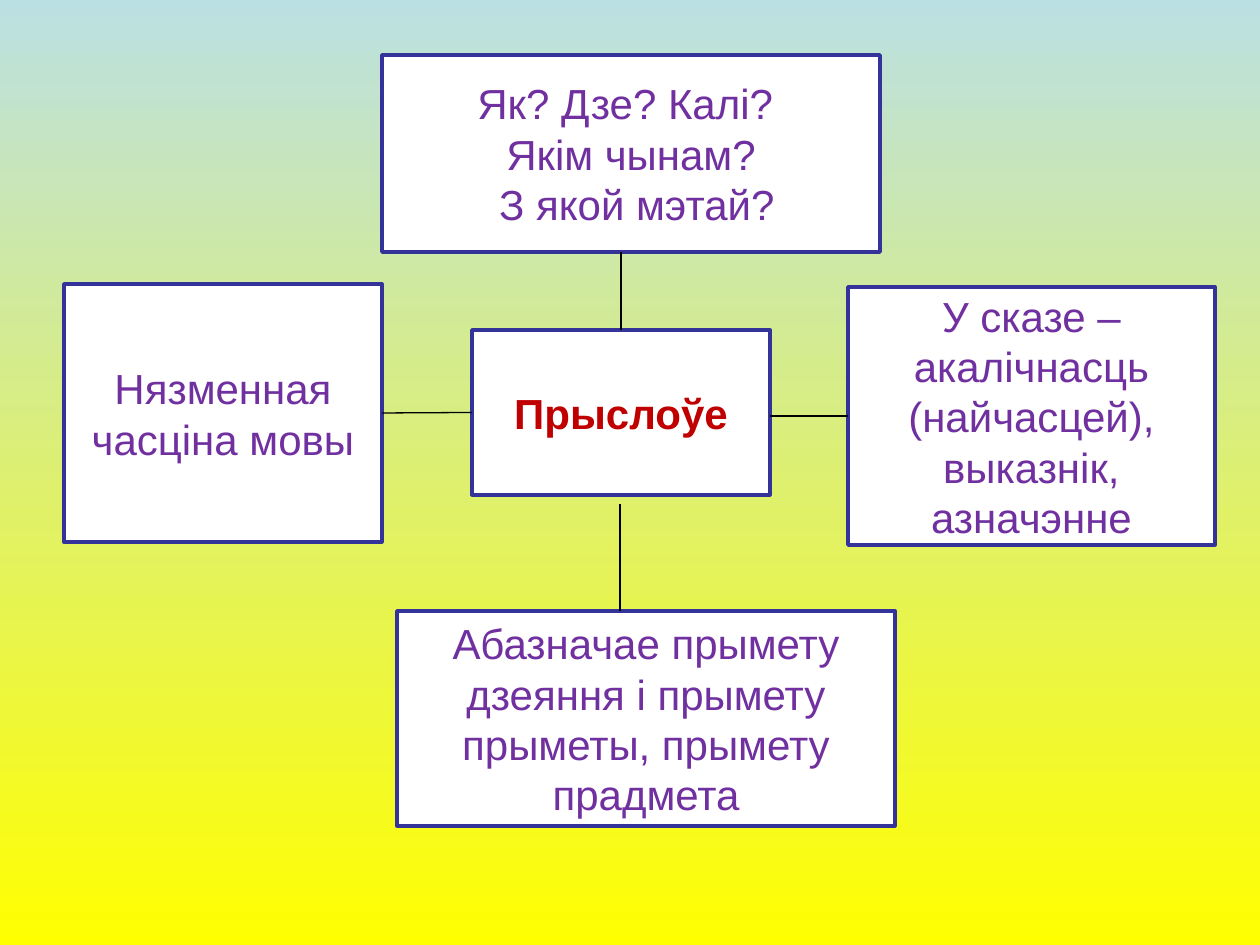
import pptx
import pptx.dml.color
import pptx.enum.shapes
import pptx.enum.text
import pptx.util
from pptx.oxml.ns import qn
from lxml import etree

PX = 914400 / 126
TOP, LEFT, BOTTOM, RIGHT = range(4)
PURPLE, RED, NAVY, WHITE, BLACK = "7030A0", "C00000", "333399", "FFFFFF", "000000"


def px(n):
    return pptx.util.Emu(round(n * PX))


def rgb(color):
    return pptx.dml.color.RGBColor.from_string(color)


def add_text(tf, lines, size=24, color=PURPLE, bold=False, font="Arial"):
    tf.word_wrap = True
    tf.vertical_anchor = pptx.enum.text.MSO_ANCHOR.MIDDLE
    for i, line in enumerate(lines):
        p = tf.add_paragraph() if i else tf.paragraphs[0]
        p.alignment = pptx.enum.text.PP_ALIGN.CENTER
        r = p.add_run()
        r.text = line
        r.font.name = font
        r.font.size = pptx.util.Pt(size)
        r.font.bold = bold
        r.font.color.rgb = rgb(color)


def add_box(s, box, lines, **text_format):
    sp = s.shapes.add_shape(pptx.enum.shapes.MSO_SHAPE.RECTANGLE, *map(px, box))
    sp.shadow.inherit = False
    sp.fill.solid()
    sp.fill.fore_color.rgb = rgb(WHITE)
    sp.line.color.rgb = rgb(NAVY)
    sp.line.width = pptx.util.Pt(2)
    add_text(sp.text_frame, lines, **text_format)
    return sp


def add_line(s, start, end, begin_at=None, end_at=None):
    """Draw a line; begin_at and end_at are (shape, side) pairs to join."""
    line = s.shapes.add_connector(
        pptx.enum.shapes.MSO_CONNECTOR.STRAIGHT, *map(px, start + end))
    line.line.color.rgb = rgb(BLACK)
    line.line.width = pptx.util.Pt(0.75)
    etree.SubElement(line._element.spPr, qn("a:effectLst"))
    if begin_at:
        line.begin_connect(*begin_at)
    if end_at:
        line.end_connect(*end_at)


def fill_background(s, top_color, bottom_color):
    fill = s.background.fill
    fill.gradient()
    fill.gradient_angle = 270
    for stop, color in zip(fill.gradient_stops, (top_color, bottom_color)):
        stop.color.rgb = rgb(color)


def add_adverb_map(s, box):
    """Place the central term and the four boxes around it."""
    x, y, _, _ = box

    def at(left, top, *size):
        return (x + left, y + top, *size)

    term = add_box(s, at(408, 275, 298, 165), ["Прыслоўе"], color=RED, bold=True)
    kind = add_box(s, at(0, 229, 318, 258), ["Нязменная часціна мовы"])
    add_box(s, at(333, 556, 498, 215),
            ["Абазначае прымету дзеяння і прымету прыметы, прымету прадмета"])
    role = add_box(s, at(784, 232, 367, 258),
                   ["У сказе – акалічнасць (найчасцей), выказнік, азначэнне"])
    add_box(s, at(318, 0, 498, 197),
            ["Як? Дзе? Калі? ", "Якім чынам?", " З якой мэтай?"])

    add_line(s, at(557, 197), at(557, 275), end_at=(term, TOP))
    add_line(s, at(706, 361), at(784, 361), end_at=(role, LEFT))
    add_line(s, at(556, 556), at(556, 449))
    add_line(s, at(318, 358), at(408, 358), (kind, RIGHT), (term, LEFT))


def main():
    prs = pptx.Presentation()
    prs.slide_width, prs.slide_height = px(1260), px(945)
    s = prs.slides.add_slide(prs.slide_layouts[6])
    fill_background(s, "BBE0E3", "FFFF00")
    add_adverb_map(s, (64, 55, 1151, 771))
    prs.save("out.pptx")


if __name__ == "__main__":
    main()
